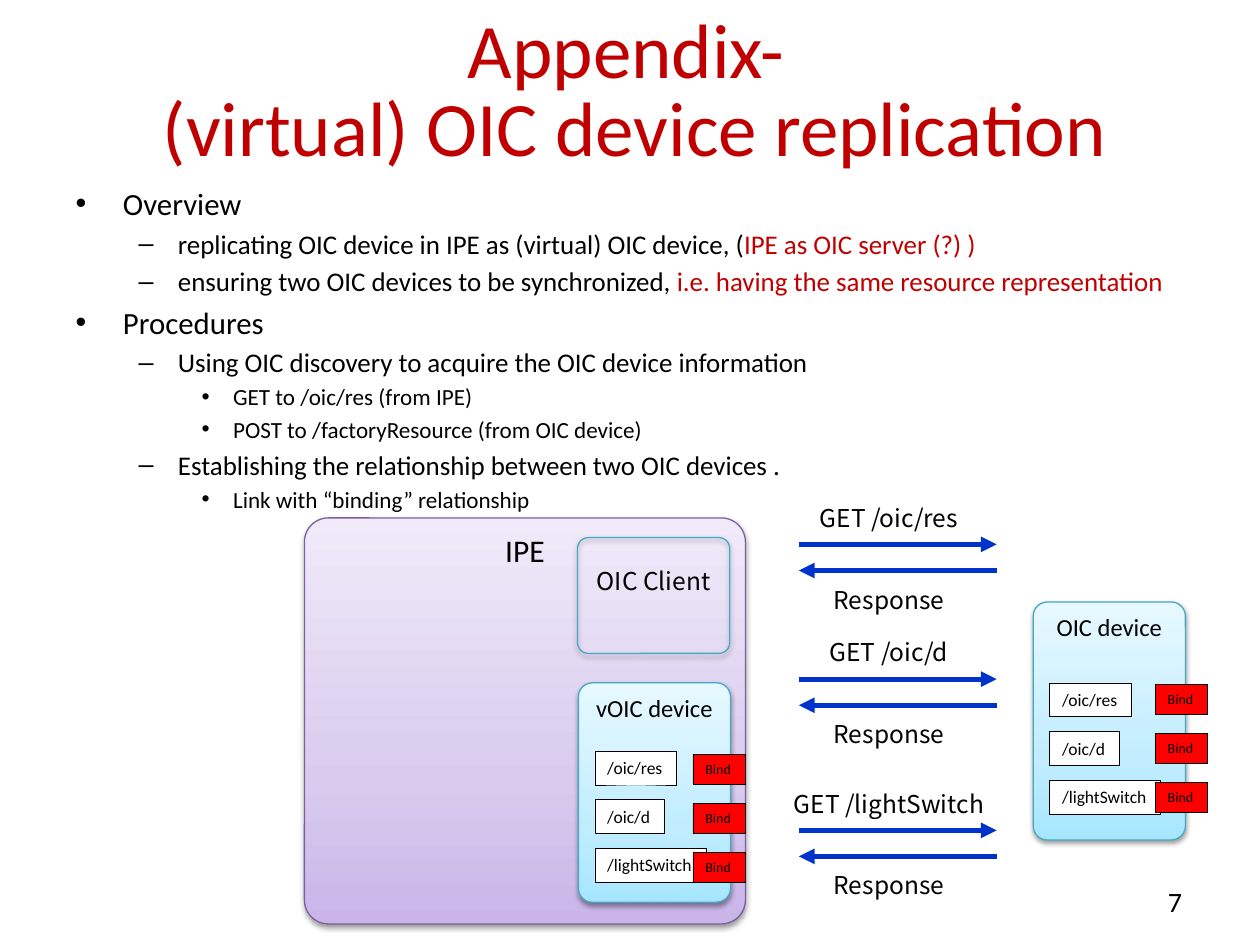
from copy import deepcopy

from lxml.etree import SubElement as Sub
from pptx import Presentation as Deck
from pptx.dml.color import RGBColor as Rgb
from pptx.enum.shapes import MSO_CONNECTOR as Link, MSO_SHAPE as Kind
from pptx.enum.text import MSO_ANCHOR as Anchor, MSO_AUTO_SIZE as Fit, PP_ALIGN as Align
from pptx.oxml.ns import qn
from pptx.util import Pt

HUES = {
    "ink": "000000", "red": "C00000", "blue": "0033CC", "white": "FFFFFF",
    "bind": "FF0000", "teal": "46AAC5", "plum": "7D60A0",
}
SKY = ["A7E6FF", "C1EDFF", "E7F8FF"]
LILAC = ["C9B5E8", "D8CBEE", "F0EAF9"]
SANS = "Noto Sans CJK KR"
INDENT = [(27, -27), (58.5, -22.5), (90, -18)]
SIZES = [17.6, 15.4, 13.2]
NOTES = [
    (0, "Overview", ""),
    (1, "replicating OIC device in IPE as (virtual) OIC device, (", "IPE as OIC server (?) )"),
    (1, "ensuring two OIC devices to be synchronized, ", "i.e. having the same resource representation"),
    (0, "Procedures", ""),
    (1, "Using OIC discovery to acquire the OIC device information", ""),
    (2, "GET to /oic/res (from IPE)", ""),
    (2, "POST to /factoryResource (from OIC device)", ""),
    (1, "Establishing the relationship between two OIC devices .", ""),
    (2, "Link with “binding” relationship", ""),
]
PATHS = [("/oic/res", 46.8), ("/oic/d", 39.6), ("/lightSwitch", 63.4)]
CALLS = [("GET /oic/res", 283.7, 117), ("GET /oic/d", 360.7, 117), ("GET /lightSwitch", 447.1, 129)]


def apply(item, form):
    """Set each attribute named in a dict."""
    for name, value in form.items():
        setattr(item, name, value)


def color(name):
    """Look up a named colour."""
    return Rgb.from_string(HUES[name])


def style(run, size, hue="ink", face="Calibri"):
    """Format one run."""
    apply(run.font, {"size": Pt(size), "name": face})
    run.font.color.rgb = color(hue)


def place(item, box):
    """Move and size an item."""
    apply(item, dict(zip(("left", "top", "width", "height"), map(Pt, box))))


def write(item, text, size, align=Align.CENTER, face="Calibri", wrap=True):
    """Put one line of text in an item."""
    frame = item.text_frame
    apply(frame, {"word_wrap": wrap, "auto_size": Fit.NONE, "vertical_anchor": Anchor.TOP})
    para = frame.paragraphs[0]
    para.alignment = align
    run = para.add_run()
    run.text = text
    style(run, size, face=face)


def label(slide, text, box, size=14, align=Align.CENTER, face=SANS):
    """Add a plain text box."""
    write(slide.shapes.add_textbox(*map(Pt, box)), text, size, align, face)


def tag(slide, text, box, size, hue, wrap):
    """Add a small outlined text rectangle."""
    rect = slide.shapes.add_shape(Kind.RECTANGLE, *map(Pt, box))
    rect.shadow.inherit = False
    rect.fill.solid()
    rect.fill.fore_color.rgb = color(hue)
    rect.line.color.rgb = color("ink")
    rect.line.width = Pt(0.25)
    write(rect, text, size, Align.LEFT, wrap=wrap)


def panel(slide, box, curve, edge, blend=None, text="", size=14):
    """Add a rounded panel with a soft shadow."""
    card = slide.shapes.add_shape(Kind.ROUNDED_RECTANGLE, *map(Pt, box))
    card.adjustments[0] = curve
    fill = card.fill
    if blend:
        fill.gradient()
        fill.gradient_angle = 90
        stops = card._element.spPr.find(".//" + qn("a:gsLst"))
        stops.insert(1, deepcopy(stops[0]))
        for stop, hue, spot in zip(fill.gradient_stops, blend, (0, 0.35, 1)):
            stop.color.rgb = Rgb.from_string(hue)
            stop.position = spot
    else:
        fill.background()
    card.line.color.rgb = color(edge)
    card.line.width = Pt(0.75)
    card.shadow.inherit = False
    glow = card._element.spPr.find(qn("a:effectLst"))
    shade = Sub(glow, qn("a:outerShdw"), blurRad=str(Pt(3.1)), dist=str(Pt(1.6)),
                dir="5400000", rotWithShape="0")
    tone = Sub(shade, qn("a:srgbClr"), val=HUES["ink"])
    Sub(tone, qn("a:alpha"), val="38000")
    if text:
        write(card, text, size)


def arrow(slide, y, end):
    """Add a level line with an arrowhead at the named end."""
    line = slide.shapes.add_connector(Link.STRAIGHT, Pt(456.5), Pt(y), Pt(569.5), Pt(y))
    line.line.color.rgb = color("blue")
    line.line.width = Pt(3)
    Sub(line.line._get_or_add_ln(), qn(end), type="triangle")
    Sub(line._element.spPr, qn("a:effectLst"))


def device(slide, text, box, top, bind):
    """Add a device panel with its resources and bind marks."""
    panel(slide, box, 0.093, "teal", SKY, text)
    for row, (name, width) in enumerate(PATHS):
        tag(slide, name, (box[0] + 9.4, top + 27.8 * row, width, 19.4), 10, "white", False)
    for row in range(len(PATHS)):
        tag(slide, "Bind", (bind[0], bind[1] + 28 * row, 29.7, 17), 8, "bind", True)


def call(slide, text, top, width):
    """Add a request and its response."""
    label(slide, text, (508 - width / 2, top, width, 24.2))
    arrow(slide, top + 27.4, "a:tailEnd")
    arrow(slide, top + 42.3, "a:headEnd")
    label(slide, "Response", (449.5, top + 46.8, 117, 24.2))


def head(title):
    """Fill the title."""
    place(title, (30, 23.8, 666, 60))
    frame = title.text_frame
    frame.text = "Appendix- \v(virtual) OIC device replication"
    apply(frame, {"auto_size": Fit.NONE, "vertical_anchor": Anchor.MIDDLE})
    para = frame.paragraphs[0]
    apply(para, {"line_spacing": 0.85, "alignment": Align.CENTER})
    for run in para.runs:
        style(run, 44, "red")


def notes(body):
    """Fill the bullet list."""
    place(body, (36, 102, 654.5, 186))
    frame = body.text_frame
    frame.auto_size = Fit.NONE
    for row, (level, plain, bright) in enumerate(NOTES):
        para = frame.add_paragraph() if row else frame.paragraphs[0]
        para.level = level
        left, hang = INDENT[level]
        props = para._p.get_or_add_pPr()
        props.set("marL", str(Pt(left)))
        props.set("indent", str(Pt(hang)))
        for text, hue in ((plain, "ink"), (bright, "red")):
            if text:
                run = para.add_run()
                run.text = text
                style(run, SIZES[level], hue)


def main():
    """Build and save the slide."""
    deck = Deck()
    apply(deck, {"slide_width": Pt(720), "slide_height": Pt(540)})
    slide = deck.slides.add_slide(deck.slide_layouts[1])
    head(slide.shapes.title)
    notes(slide.placeholders[1])
    label(slide, "7", (649.5, 501.8, 33, 26.6), 16, Align.RIGHT, "Calibri")
    panel(slide, (174, 296, 252, 232), 0.059, "plum", LILAC, "IPE", 18)
    panel(slide, (330, 307.2, 87, 66.2), 0.093, "teal")
    label(slide, "OIC Client", (325.5, 319.7, 96, 24.2))
    for item in CALLS:
        call(slide, *item)
    device(slide, "OIC device", (590.4, 344, 87, 136), 390.2, (660.2, 391))
    device(slide, "vOIC device", (330.5, 390.2, 87, 125.4), 429.1, (396, 431.2))
    deck.save("out.pptx")


if __name__ == "__main__":
    main()
